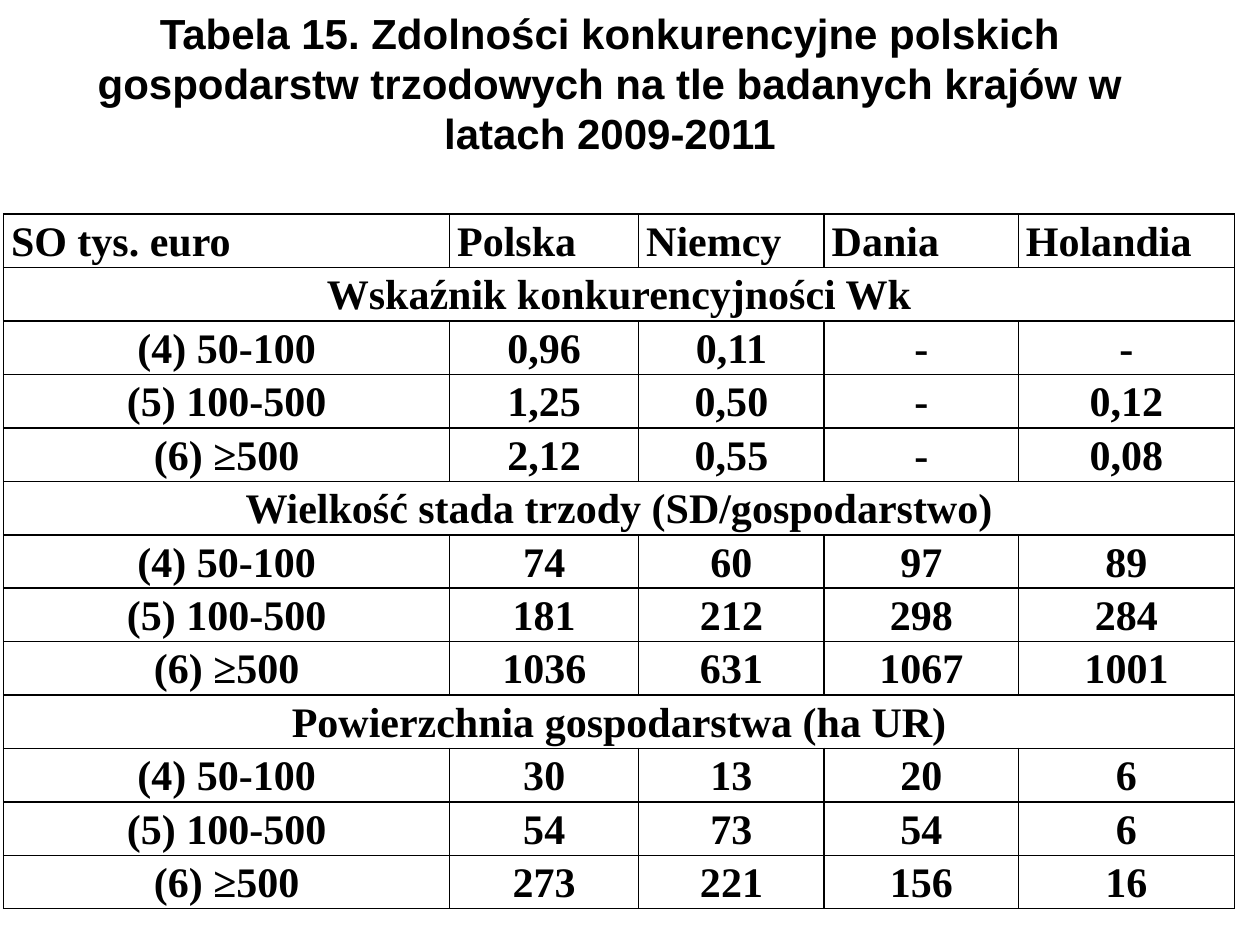
from lxml import etree
from pptx import Presentation
from pptx import util as u
from pptx.dml import color
from pptx.enum import text
from pptx.oxml import ns

Pt = u.Pt
HUES = {"ink": "000000", "page": "FFFFFF"}
BASE = {"size": Pt(24), "bold": True}


def style(par, face, side):
    par.alignment = side
    for run in par.runs:
        for key, val in {**BASE, "name": face}.items():
            setattr(run.font, key, val)
        run.font.color.rgb = color.RGBColor.from_string(HUES["ink"])


def edge(cell):
    props = cell._tc.get_or_add_tcPr()
    for tag in ("a:lnL", "a:lnR", "a:lnT", "a:lnB"):
        line = etree.SubElement(props, ns.qn(tag), w=str(Pt(1)))
        fill = etree.SubElement(line, ns.qn("a:solidFill"))
        etree.SubElement(fill, ns.qn("a:srgbClr"), val=HUES["ink"])


deck = Presentation()
deck.slide_width, deck.slide_height = Pt(720), Pt(540)
slide = deck.slides.add_slide(deck.slide_layouts[6])
slide.background.fill.solid()
slide.background.fill.fore_color.rgb = color.RGBColor.from_string(HUES["page"])

# Title
frame = slide.shapes.add_textbox(Pt(31), Pt(0), Pt(635), Pt(94.5)).text_frame
frame.word_wrap = True
frame.vertical_anchor = text.MSO_ANCHOR.MIDDLE
frame.text = ("Tabela 15. Zdolności konkurencyjne polskich gospodarstw "
              "trzodowych na tle badanych krajów w latach 2009-2011")
style(frame.paragraphs[0], "Arial", text.PP_ALIGN.CENTER)

# Table content: a heading and three size classes in each group
sizes = ["(4) 50-100", "(5) 100-500", "(6) ≥500"]
groups = {
    "Wskaźnik konkurencyjności Wk": [
        ["0,96", "0,11", "-", "-"],
        ["1,25", "0,50", "-", "0,12"],
        ["2,12", "0,55", "-", "0,08"]],
    "Wielkość stada trzody (SD/gospodarstwo)": [
        ["74", "60", "97", "89"],
        ["181", "212", "298", "284"],
        ["1036", "631", "1067", "1001"]],
    "Powierzchnia gospodarstwa (ha UR)": [
        ["30", "13", "20", "6"],
        ["54", "73", "54", "6"],
        ["273", "221", "156", "16"]],
}
rows = [["SO tys. euro", "Polska", "Niemcy", "Dania", "Holandia"]]
for head, lines in groups.items():
    rows.append([head])
    rows += [[size, *line] for size, line in zip(sizes, lines)]

# Table grid
wide = [255, 108, 106, 111, 123.5]
high = 30.55
table = slide.shapes.add_table(len(rows), len(wide), Pt(2), Pt(122.4),
                               Pt(sum(wide)), Pt(high * len(rows))).table
table.first_row = table.horz_banding = False
for col, width in zip(table.columns, wide):
    col.width = Pt(width)
for row in table.rows:
    row.height = Pt(high)

# Table cells
CELL = {"margin_left": Pt(4.3), "margin_right": Pt(4.3), "margin_top": 0,
        "margin_bottom": 0, "vertical_anchor": text.MSO_ANCHOR.MIDDLE}
for r, row in enumerate(rows):
    if len(row) == 1:
        table.cell(r, 0).merge(table.cell(r, len(wide) - 1))
    for c in range(len(wide)):
        cell = table.cell(r, c)
        edge(cell)
        cell.fill.background()
        for key, val in CELL.items():
            setattr(cell, key, val)
        if c < len(row):
            cell.text = row[c]
        par = cell.text_frame.paragraphs[0]
        par.line_spacing, par.space_after = 1.06, Pt(10)
        style(par, "Times New Roman",
              text.PP_ALIGN.CENTER if r else text.PP_ALIGN.LEFT)

deck.save("out.pptx")
